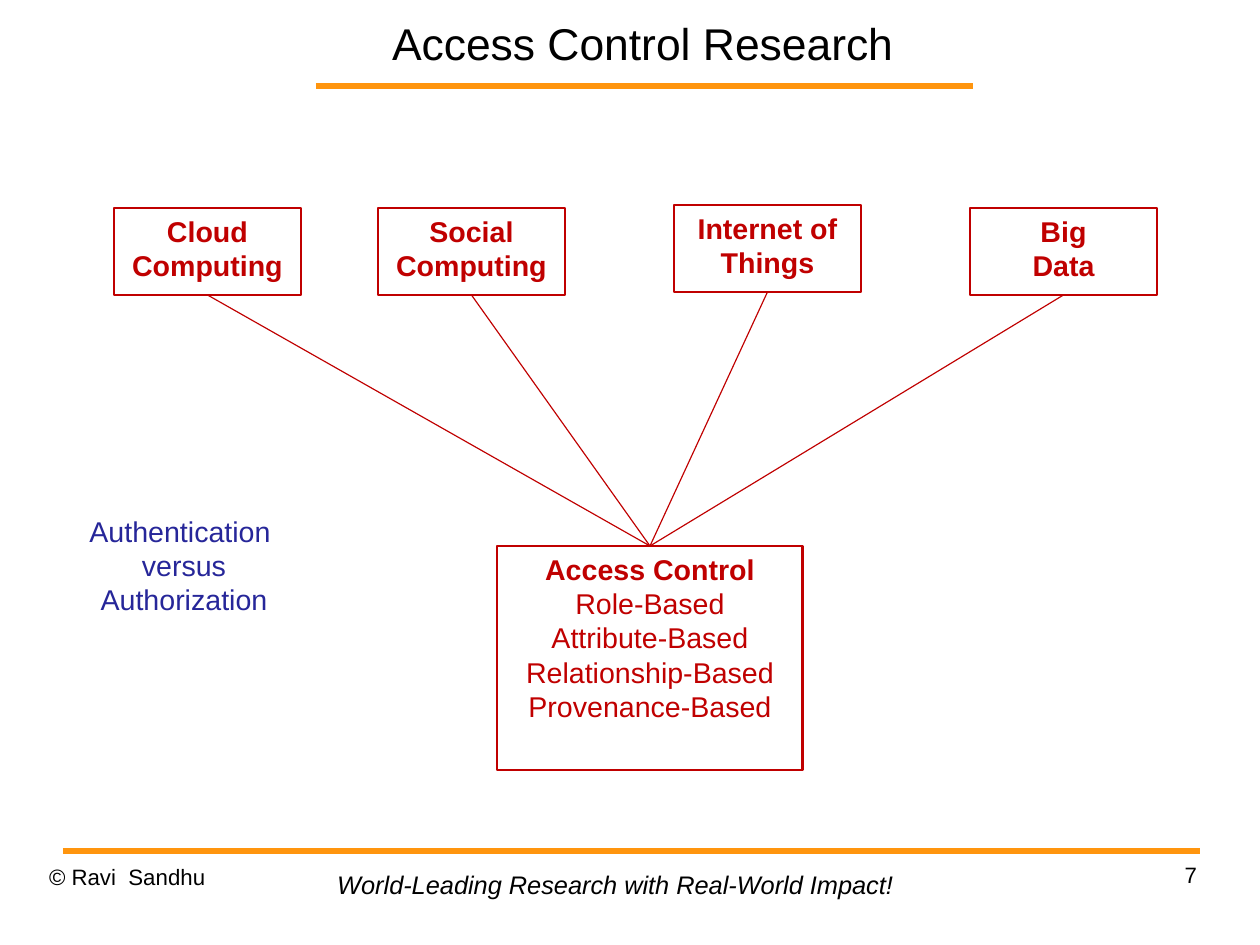
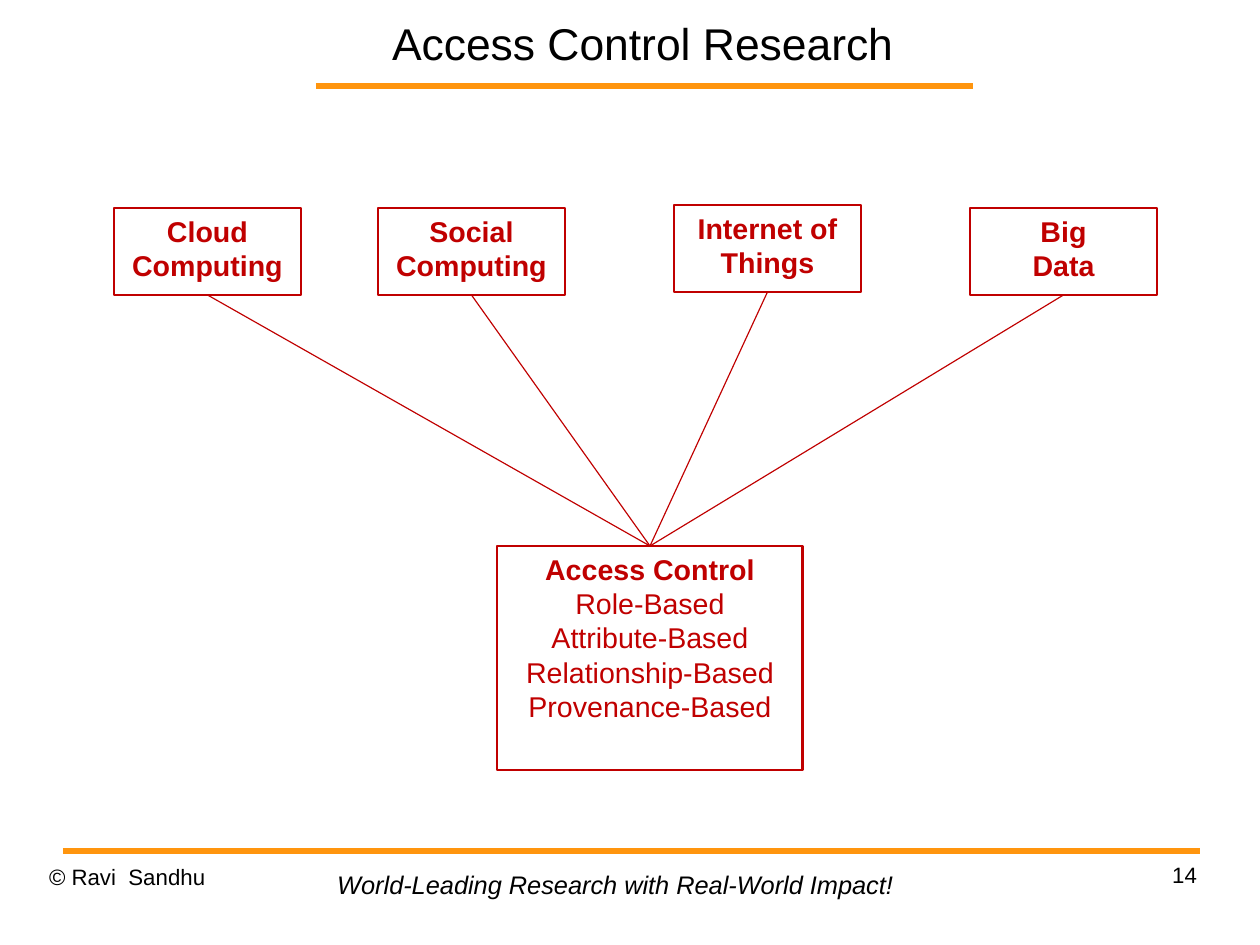
"""Build two access control research slides with shared bands and footers."""
from typing import NamedTuple

import pptx
import pptx.dml.color
import pptx.enum.shapes
import pptx.enum.text
import pptx.oxml
import pptx.oxml.ns
import pptx.util

PX = 8000
FONT = "Arial"
BLACK, RED, BLUE, ORANGE = "000000", "C00000", "262699", "FF950E"
PP_ALIGN = pptx.enum.text.PP_ALIGN
ANCHOR = pptx.enum.text.MSO_ANCHOR
AUTO_SIZE = pptx.enum.text.MSO_AUTO_SIZE


class Box(NamedTuple):
    left: int
    top: int
    width: int
    height: int

    def emu(self) -> list[int]:
        return [px(v) for v in self]


class Run(NamedTuple):
    text: str
    bold: bool = False


class Topic(NamedTuple):
    box: Box
    lines: list[str]


SLIDE_W, SLIDE_H = 1260, 945
BANDS = [(316, 86, 973, 86), (63, 851, 1200, 851)]
TITLE = Box(275, 0, 735, 86)
NUMBER = Box(903, 861, 294, 65)
COPYRIGHT = Box(49, 863, 294, 65)
TAGLINE = Box(326, 863, 581, 42)
ACCESS = Box(497, 546, 306, 224)
ASIDE = Box(73, 508, 222, 115)
TOPIC_W, TOPIC_H = 187, 87
TOPICS = [
    Topic(Box(114, 208, TOPIC_W, TOPIC_H), ["Cloud Computing"]),
    Topic(Box(674, 205, TOPIC_W, TOPIC_H), ["Internet of Things"]),
    Topic(Box(378, 208, TOPIC_W, TOPIC_H), ["Social Computing"]),
    Topic(Box(970, 208, TOPIC_W, TOPIC_H), ["Big", "Data"]),
]
ACCESS_LINES = [
    [Run("Access Control ", True), Run("Role-Based")],
    "Attribute-Based",
    "Relationship-Based",
    "Provenance-Based",
]


def px(value: int) -> int:
    return pptx.util.Emu(value * PX)


def rgb(value: str) -> pptx.dml.color.RGBColor:
    return pptx.dml.color.RGBColor.from_string(value)


def write(sp, lines, *, size=18, color=BLACK, bold=False, italic=False,
          align=PP_ALIGN.CENTER, anchor=ANCHOR.TOP, spacing=None,
          inset=True, wrap=True, auto_size=AUTO_SIZE.NONE) -> None:
    tf = sp.text_frame
    tf.word_wrap = wrap
    tf.auto_size = auto_size
    tf.vertical_anchor = anchor
    if not inset:
        tf.margin_left = tf.margin_top = tf.margin_right = tf.margin_bottom = 0
    for i, line in enumerate(lines):
        p = tf.add_paragraph() if i else tf.paragraphs[0]
        p.alignment = align
        if spacing:
            p.line_spacing = spacing
        for part in [Run(line, bold)] if isinstance(line, str) else line:
            r = p.add_run()
            r.text = part.text
            r.font.name = FONT
            r.font.size = pptx.util.Pt(size)
            r.font.bold = part.bold
            r.font.italic = italic
            r.font.color.rgb = rgb(color)


def add_text(slide, box: Box, lines, **fmt) -> None:
    write(slide.shapes.add_textbox(*box.emu()), lines, **fmt)


def add_box(slide, box: Box, lines, **fmt):
    sp = slide.shapes.add_shape(
        pptx.enum.shapes.MSO_SHAPE.RECTANGLE, *box.emu())
    sp.shadow.inherit = False
    sp.fill.background()
    sp.line.color.rgb = rgb(RED)
    sp.line.width = pptx.util.Pt(1.75)
    write(sp, lines, color=RED, **fmt)
    return sp


def add_line(slide, ends, color: str, width: float):
    line = slide.shapes.add_connector(
        pptx.enum.shapes.MSO_CONNECTOR.STRAIGHT, *(px(v) for v in ends))
    line.line.color.rgb = rgb(color)
    line.line.width = pptx.util.Pt(width)
    line._element.spPr.append(pptx.oxml.parse_xml(
        f"<a:effectLst {pptx.oxml.ns.nsdecls('a')}/>"))
    return line


def add_frame(prs, title: str, number: int):
    slide = prs.slides.add_slide(prs.slide_layouts.get_by_name("Title Only"))
    for ends in BANDS:
        add_line(slide, ends, ORANGE, 4.31)
    add_text(slide, NUMBER, [str(number)], size=14, align=PP_ALIGN.RIGHT,
             spacing=1.01, inset=False)
    add_text(slide, COPYRIGHT, ["© Ravi  Sandhu"], size=14,
             align=PP_ALIGN.LEFT, spacing=1.01, inset=False)
    add_text(slide, TAGLINE, ["World-Leading Research with Real-World Impact!"],
             size=16, italic=True, align=PP_ALIGN.LEFT, wrap=False,
             auto_size=AUTO_SIZE.SHAPE_TO_FIT_TEXT)
    sp = slide.shapes.title
    sp.left, sp.top, sp.width, sp.height = TITLE.emu()
    write(sp, [title], size=28, anchor=ANCHOR.MIDDLE, inset=False)
    return slide


def add_research(prs, number: int):
    slide = add_frame(prs, "Access Control Research", number)
    access = add_box(slide, ACCESS, ACCESS_LINES)
    for topic in TOPICS:
        sp = add_box(slide, topic.box, topic.lines, bold=True)
        line = add_line(slide, (0, 0, 0, 0), RED, 0.75)
        line.begin_connect(sp, 2)
        line.end_connect(access, 0)
    return slide


def main() -> None:
    prs = pptx.Presentation()
    prs.slide_width, prs.slide_height = px(SLIDE_W), px(SLIDE_H)
    slide = add_research(prs, 7)
    add_text(slide, ASIDE, ["Authentication ", "versus", "Authorization"],
             color=BLUE, auto_size=AUTO_SIZE.SHAPE_TO_FIT_TEXT)
    add_research(prs, 14)
    prs.save("out.pptx")


if __name__ == "__main__":
    main()
